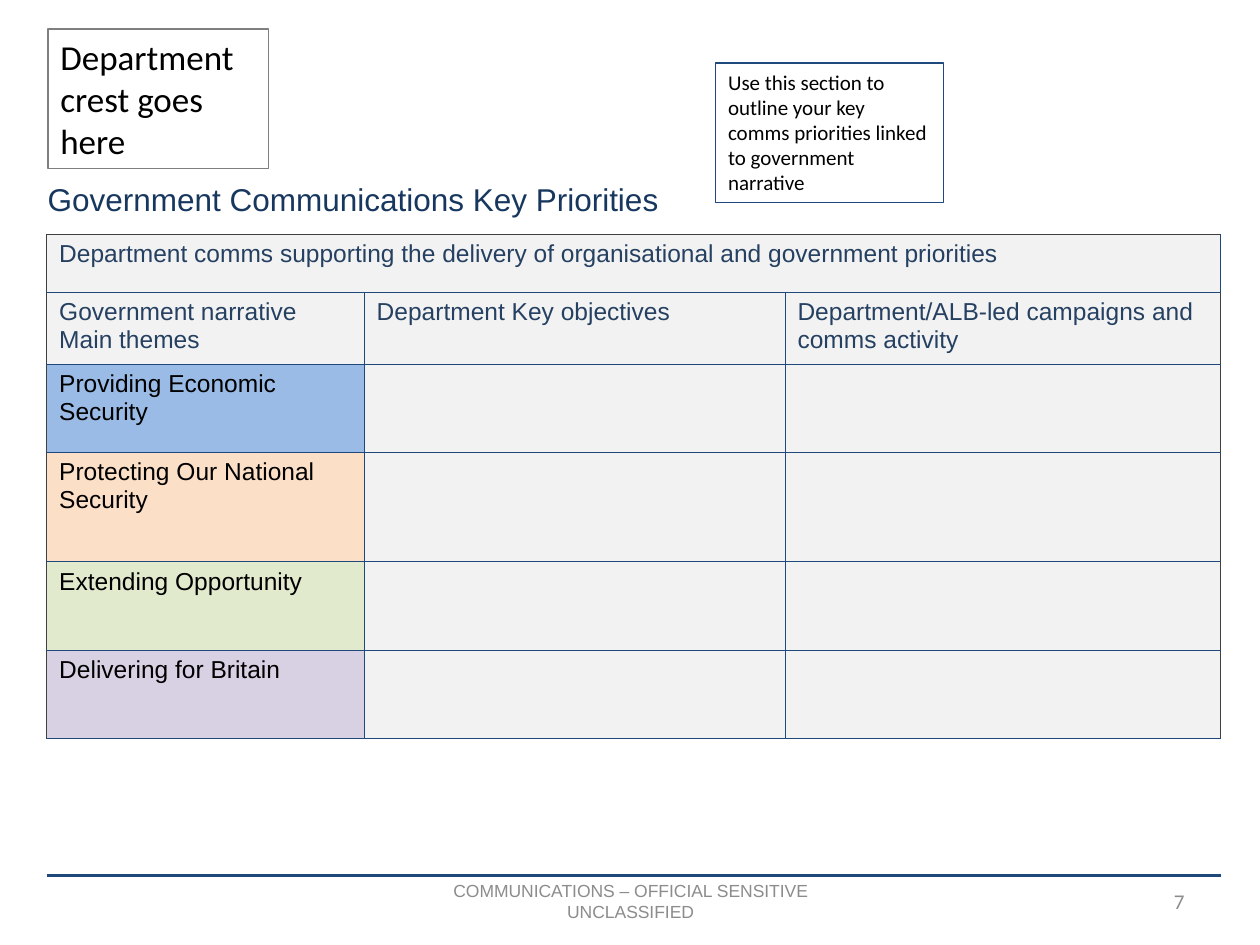
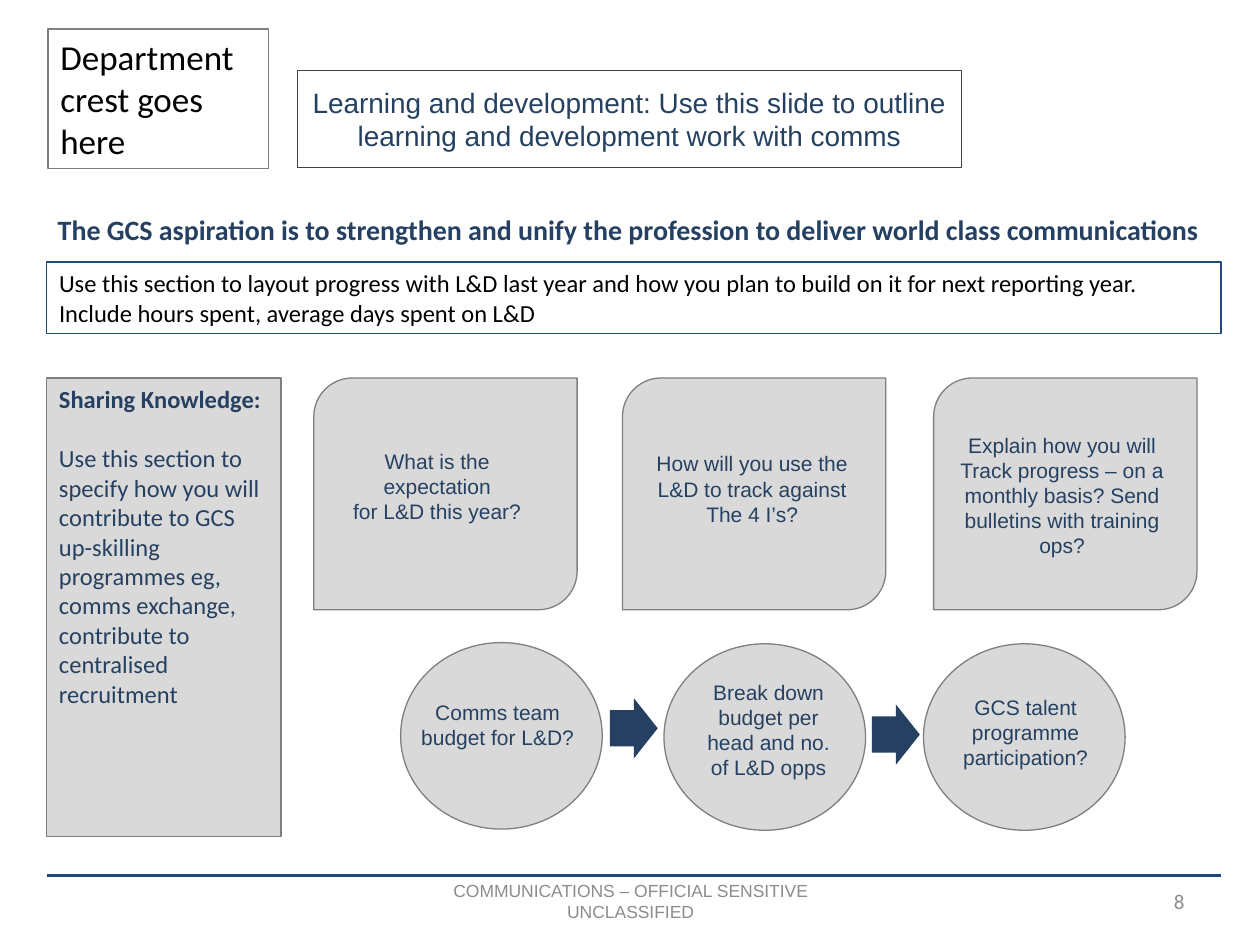
"""Build the priorities table slide and the learning and development slide."""
from dataclasses import dataclass
from typing import NamedTuple

from lxml.etree import SubElement
from pptx import Presentation
from pptx.dml.color import RGBColor
from pptx.enum.shapes import MSO_CONNECTOR, MSO_SHAPE
from pptx.enum.text import MSO_ANCHOR, PP_ALIGN
from pptx.oxml import parse_xml
from pptx.oxml.ns import nsdecls, qn
from pptx.slide import Slide
from pptx.table import _Cell
from pptx.util import Pt

SCALE = 9144


class Style(NamedTuple):
    name: str
    size: int
    tint: str
    bold: bool = False


class Area(NamedTuple):
    left: int
    top: int
    width: int
    height: int

    def emu(self) -> list[int]:
        return [px * SCALE for px in self]


@dataclass(frozen=True)
class Theme:
    blue: str = "1F497D"
    navy: str = "254061"
    dark: str = "404040"
    mid: str = "7F7F7F"
    gray: str = "D9D9D9"
    pale: str = "F2F2F2"
    crest: Style = Style("Calibri", 20, "000000")
    title: Style = Style("Arial", 18, "17375E")
    foot: Style = Style("Arial", 10, "8C8C8C")
    page: Style = Style("Calibri", 12, "8C8C8C")
    note: Style = Style("Calibri", 12, "000000")
    plan: Style = Style("Calibri", 14, "000000")
    lead: Style = Style("Arial", 16, "254061")
    goal: Style = Style("Calibri", 16, "254061", True)
    head: Style = Style("Calibri", 14, "254061", True)
    body: Style = Style("Calibri", 14, "254061")
    label: Style = Style("Arial", 12, "254061")
    grid: Style = Style("Arial", 14, "254061")
    theme: Style = Style("Arial", 14, "000000")


LOOK = Theme()


class Line(NamedTuple):
    text: str
    style: Style
    gap: int = 0


@dataclass(frozen=True)
class Box:
    area: Area
    lines: tuple[Line, ...] = ()
    shape: MSO_SHAPE | None = None
    fill: str | None = None
    edge: str | None = None
    align: PP_ALIGN = PP_ALIGN.LEFT
    anchor: MSO_ANCHOR = MSO_ANCHOR.TOP
    wrap: bool = True
    adjust: tuple[float, ...] = ()


class Theme_Row(NamedTuple):
    text: str
    fill: str
    alpha: int
    height: int


def rgb(tint: str) -> RGBColor:
    return RGBColor.from_string(tint)


def lines(style: Style, *texts: str) -> tuple[Line, ...]:
    return tuple(Line(text, style) for text in texts)


def write(frame, items: tuple[Line, ...], align: PP_ALIGN) -> None:
    for i, item in enumerate(items):
        para = frame.add_paragraph() if i else frame.paragraphs[0]
        para.alignment = align
        if item.gap:
            para.space_before = Pt(item.gap)
        run = para.add_run()
        run.text = item.text
        style = item.style
        values = {"name": style.name, "size": Pt(style.size), "bold": style.bold}
        for key, value in values.items():
            setattr(run.font, key, value)
        run.font.color.rgb = rgb(style.tint)


def draw(slide: Slide, box: Box) -> None:
    if box.shape is None:
        item = slide.shapes.add_textbox(*box.area.emu())
    else:
        item = slide.shapes.add_shape(box.shape, *box.area.emu())
        item.shadow.inherit = False
        for i, value in enumerate(box.adjust):
            item.adjustments[i] = value
        if box.fill:
            item.fill.solid()
            item.fill.fore_color.rgb = rgb(box.fill)
        else:
            item.fill.background()
        if box.edge:
            item.line.color.rgb = rgb(box.edge)
            item.line.width = Pt(0.75)
        else:
            item.line.fill.background()
    if box.lines:
        frame = item.text_frame
        for key, value in {"word_wrap": box.wrap, "vertical_anchor": box.anchor}.items():
            setattr(frame, key, value)
        write(frame, box.lines, box.align)


def rule(slide: Slide) -> None:
    left, right, top = (px * SCALE for px in (37, 969, 695))
    line = slide.shapes.add_connector(MSO_CONNECTOR.STRAIGHT, left, top, right, top)
    line.line.color.rgb = rgb(LOOK.blue)
    line.line.width = Pt(2)
    SubElement(line.element.spPr, qn("a:effectLst"))


def start(deck, page: int) -> Slide:
    slide = deck.slides.add_slide(deck.slide_layouts[6])
    middle = MSO_ANCHOR.MIDDLE
    draw(slide, Box(Area(38, 23, 175, 111), lines(LOOK.crest, "Department crest goes here"),
                    MSO_SHAPE.RECTANGLE, edge=LOOK.mid))
    draw(slide, Box(Area(342, 693, 317, 44),
                    lines(LOOK.foot, "COMMUNICATIONS – OFFICIAL SENSITIVE", "UNCLASSIFIED"),
                    align=PP_ALIGN.CENTER, anchor=middle, wrap=False))
    draw(slide, Box(Area(717, 695, 233, 40), lines(LOOK.page, str(page)),
                    align=PP_ALIGN.RIGHT, anchor=middle))
    rule(slide)
    return slide


def paint(cell: _Cell, fill: str, alpha: int, edges: dict[str, str]) -> None:
    cell.fill.solid()
    cell.fill.fore_color.rgb = rgb(fill)
    props = cell._tc.get_or_add_tcPr()
    if alpha < 100:
        tint = props.find(f".//{qn('a:srgbClr')}")
        SubElement(tint, qn("a:alpha")).set("val", str(alpha * 1000))
    for i, (side, edge) in enumerate(edges.items()):
        props.insert(i, parse_xml(
            f'<a:ln{side} {nsdecls("a")} w="6350"><a:solidFill>'
            f'<a:srgbClr val="{edge}"/></a:solidFill></a:ln{side}>'))


def chart_aims(slide: Slide) -> None:
    heads = ("Government narrative Main themes", "Department Key objectives",
             "Department/ALB-led campaigns and comms activity")
    themes = (
        Theme_Row("Providing Economic Security", "8EB4E3", 90, 70),
        Theme_Row("Protecting Our National Security", "FCD5B5", 75, 87),
        Theme_Row("Extending Opportunity", "D7E4BD", 75, 70),
        Theme_Row("Delivering for Britain", "CCC1DA", 75, 70),
    )
    widths = (252, 334, 346)
    heights = (46, 57, *(row.height for row in themes))
    area = Area(37, 186, sum(widths), sum(heights))
    table = slide.shapes.add_table(len(heights), len(widths), *area.emu()).table
    for col, width in zip(table.columns, widths):
        col.width = width * SCALE
    for row, height in zip(table.rows, heights):
        row.height = height * SCALE
    for r in range(len(heights)):
        for c in range(len(widths)):
            edges = {
                "L": LOOK.blue if c else LOOK.dark,
                "R": LOOK.blue if c < len(widths) - 1 else LOOK.dark,
                "T": LOOK.blue if r else LOOK.dark,
                "B": LOOK.blue,
            }
            tinted = r > 1 and c == 0
            fill, alpha = themes[r - 2][1:3] if tinted else (LOOK.pale, 100)
            paint(table.cell(r, c), fill, alpha, edges)
    table.cell(0, 0).merge(table.cell(0, len(widths) - 1))
    texts = {(0, 0): Line("Department comms supporting the delivery of organisational "
                          "and government priorities", LOOK.grid)}
    texts |= {(1, c): Line(text, LOOK.grid) for c, text in enumerate(heads)}
    texts |= {(r, 0): Line(row.text, LOOK.theme) for r, row in enumerate(themes, 2)}
    for spot, line in texts.items():
        write(table.cell(*spot).text_frame, (line,), PP_ALIGN.LEFT)


def show_aims(deck) -> None:
    slide = start(deck, 7)
    draw(slide, Box(Area(28, 126, 517, 64),
                    lines(LOOK.title, "Government Communications Key Priorities"),
                    anchor=MSO_ANCHOR.MIDDLE))
    chart_aims(slide)
    draw(slide, Box(Area(568, 50, 181, 111),
                    lines(LOOK.note, "Use this section to outline your key comms priorities "
                          "linked to government narrative"),
                    MSO_SHAPE.RECTANGLE, edge=LOOK.blue))


def show_skills(deck) -> None:
    slide = start(deck, 8)
    rect, center = MSO_SHAPE.RECTANGLE, PP_ALIGN.CENTER
    draw(slide, Box(Area(236, 56, 527, 77),
                    lines(LOOK.lead, "Learning and development: Use this slide to outline "
                          "learning and development work with comms"),
                    rect, edge=LOOK.dark, align=center, anchor=MSO_ANCHOR.MIDDLE))
    draw(slide, Box(Area(36, 164, 932, 37),
                    lines(LOOK.goal, "The GCS aspiration is to strengthen and unify the "
                          "profession to deliver world class communications")))
    draw(slide, Box(Area(37, 208, 932, 57),
                    lines(LOOK.plan, "Use this section to layout progress with L&D last year "
                          "and how you plan to build on it for next reporting year. "
                          "Include hours spent, average days spent on L&D"),
                    rect, edge=LOOK.blue))
    share = (Line("Sharing Knowledge:", LOOK.head),
             Line("Use this section to specify how you will contribute to GCS up-skilling "
                  "programmes eg, comms exchange, contribute to centralised recruitment",
                  LOOK.body, 17))
    draw(slide, Box(Area(37, 300, 186, 364), share, rect, LOOK.gray, LOOK.mid))

    card, disc = MSO_SHAPE.ROUND_2_DIAG_RECTANGLE, MSO_SHAPE.OVAL
    parts = (
        (card, Area(249, 300, 209, 184), Area(249, 351, 196, 71),
         ("What is the", "expectation", "for L&D this year?")),
        (card, Area(494, 300, 209, 184), Area(499, 353, 196, 71),
         ("How will you use the", "L&D to track against", "The 4 I’s?")),
        (card, Area(741, 300, 209, 184), Area(745, 338, 196, 111),
         ("Explain how you will",
          "Track progress – on a monthly basis? Send bulletins with training ops?")),
        (disc, Area(318, 510, 160, 148), Area(297, 550, 196, 50),
         ("Comms team", "budget for L&D?")),
        (disc, Area(527, 511, 160, 148), Area(544, 534, 132, 91),
         ("Break down budget per head and no. of L&D opps",)),
        (disc, Area(733, 511, 160, 148), Area(748, 546, 132, 71),
         ("GCS talent programme participation?",)),
    )
    for shape, area, spot, texts in parts:
        draw(slide, Box(area, (), shape, LOOK.gray, LOOK.mid))
        draw(slide, Box(spot, lines(LOOK.label, *texts), align=center))
    for left, top in ((484, 554), (692, 559)):
        draw(slide, Box(Area(left, top, 38, 48), (), MSO_SHAPE.RIGHT_ARROW, LOOK.navy,
                        adjust=(0.6, 0.5)))


def main() -> None:
    deck = Presentation()
    for key, px in {"slide_width": 1000, "slide_height": 750}.items():
        setattr(deck, key, px * SCALE)
    show_aims(deck)
    show_skills(deck)
    deck.save("out.pptx")


if __name__ == "__main__":
    main()
